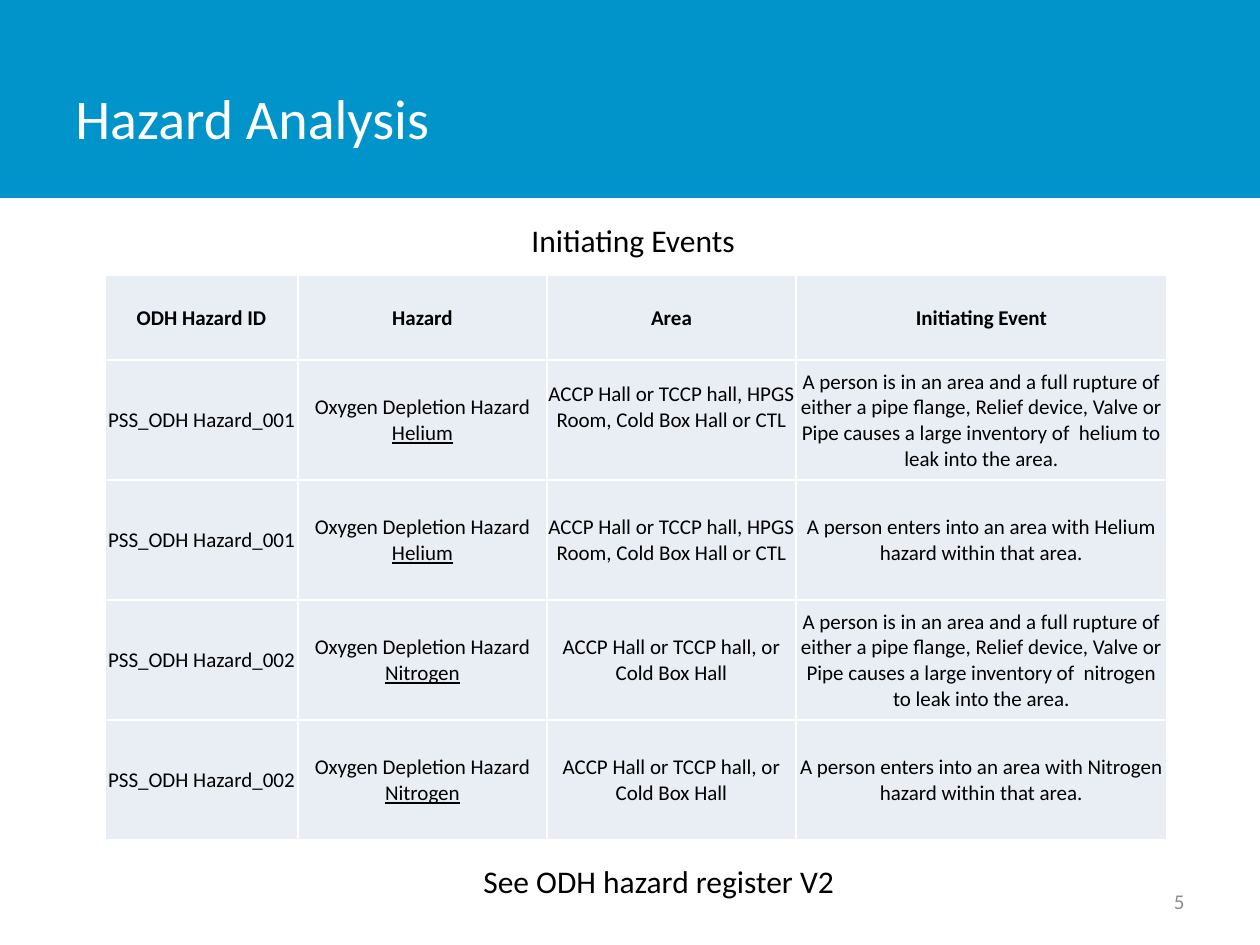
from lxml import etree
from pptx import Presentation
from pptx import util as u
from pptx.dml.color import RGBColor
from pptx.enum import shapes, text
from pptx.oxml import ns

SCALE = 914400 / 126  # EMU in one px
BLUE = RGBColor(0x00, 0x94, 0xCA)
PALE = RGBColor(0xE9, 0xED, 0xF4)
GREY = RGBColor(0x8C, 0x8C, 0x8C)
WHITE = RGBColor(0xFF, 0xFF, 0xFF)
BLACK = RGBColor(0x00, 0x00, 0x00)


def px(*lengths):
    return [u.Emu(round(length * SCALE)) for length in lengths]


def apply(target, values):
    for name, value in values.items():
        setattr(target, name, value)


class SlideBuilder:
    font_name = "Calibri"
    border_width = u.Pt(1)

    def __init__(self, deck):
        self.page = deck.slides.add_slide(deck.slide_layouts[6])

    def add_span(self, para, words, size, color, **style):
        span = para.add_run()
        span.text = words
        apply(span.font, {"name": self.font_name, "size": u.Pt(size), **style})
        span.font.color.rgb = color

    def add_band(self, place, color):
        band = self.page.shapes.add_shape(shapes.MSO_SHAPE.RECTANGLE, *px(*place))
        band.shadow.inherit = False
        band.fill.solid()
        band.fill.fore_color.rgb = color
        band.line.fill.background()

    def add_text(self, place, words, size, color, align=text.PP_ALIGN.LEFT, **frame_style):
        box = self.page.shapes.add_textbox(*px(*place))
        apply(box.text_frame, {"word_wrap": True, **frame_style})
        para = box.text_frame.paragraphs[0]
        para.alignment = align
        self.add_span(para, words, size, color)

    def add_borders(self, cell):
        properties = cell._tc.get_or_add_tcPr()
        for side in ("lnL", "lnR", "lnT", "lnB"):
            line = etree.SubElement(properties, ns.qn(f"a:{side}"), w=str(self.border_width))
            fill = etree.SubElement(line, ns.qn("a:solidFill"))
            etree.SubElement(fill, ns.qn("a:srgbClr"), val=str(WHITE))

    def add_cell(self, cell, spans, bold):
        """Fill a cell with (words, underlined) spans."""
        margin, = px(1)
        apply(cell, {"margin_left": margin, "margin_right": margin, "margin_top": margin,
                     "margin_bottom": 0, "vertical_anchor": text.MSO_ANCHOR.MIDDLE})
        self.add_borders(cell)
        cell.fill.solid()
        cell.fill.fore_color.rgb = PALE
        para = cell.text_frame.paragraphs[0]
        para.alignment = text.PP_ALIGN.CENTER
        for words, underline in spans:
            self.add_span(para, words, 12, BLACK, bold=bold, underline=underline)

    def add_table(self, left, top, widths, heights, rows):
        place = px(left, top, sum(widths), sum(heights))
        table = self.page.shapes.add_table(len(rows), len(widths), *place).table
        apply(table, {"first_row": False, "horz_banding": False})
        for column, width in zip(table.columns, px(*widths)):
            column.width = width
        for row, height in zip(table.rows, px(*heights)):
            row.height = height
        for r, row in enumerate(rows):
            for c, spans in enumerate(row):
                self.add_cell(table.cell(r, c), spans, bold=r == 0)
        return table


def hazard_rows(number, gas, area):
    """The two initiating events of one gas: a rupture, then a person entering."""
    events = (
        "A person is in an area and a full rupture of either a pipe flange, Relief device, "
        f"Valve or Pipe causes a large inventory of  {gas.lower()} to leak into the area.",
        f"A person enters into an area with {gas} hazard within that area.",
    )
    return [[
        [(f"PSS_ODH Hazard_{number:03}", False)],
        [("Oxygen Depletion Hazard ", False), (gas, True)],
        [(area, False)],
        [(event, False)],
    ] for event in events]


def main():
    deck = Presentation()
    deck.slide_width, deck.slide_height = px(1260, 945)
    slide = SlideBuilder(deck)
    middle = {"vertical_anchor": text.MSO_ANCHOR.MIDDLE}
    caption = {"word_wrap": False, "auto_size": text.MSO_AUTO_SIZE.SHAPE_TO_FIT_TEXT}

    # Header, page number and title
    slide.add_band((0, 0, 1260, 198), BLUE)
    slide.add_text((903, 876, 294, 50), "5", 12, GREY, text.PP_ALIGN.RIGHT, **middle)
    slide.add_text((63, 38, 984, 158), "Hazard Analysis", 32, WHITE, **middle)

    # Table of initiating events
    slide.add_text((519, 215, 232, 50), "Initiating Events", 18, BLACK, **caption)
    header = [[(words, False)]
              for words in ("ODH Hazard ID", "Hazard", "Area", "Initiating Event")]
    rows = [
        header,
        *hazard_rows(1, "Helium", "ACCP Hall or TCCP hall, HPGS Room, Cold Box Hall or CTL"),
        *hazard_rows(2, "Nitrogen", "ACCP Hall or TCCP hall, or Cold Box Hall"),
    ]
    table = slide.add_table(105, 275, (193, 249, 249, 371), (85, *[120] * 4), rows)
    # The first area sits half a line above the middle
    table.cell(1, 2).margin_bottom, = px(26)

    # Closing reference
    slide.add_text((471, 856, 388, 50), "See ODH hazard register V2", 18, BLACK, **caption)

    deck.save("out.pptx")


if __name__ == "__main__":
    main()
